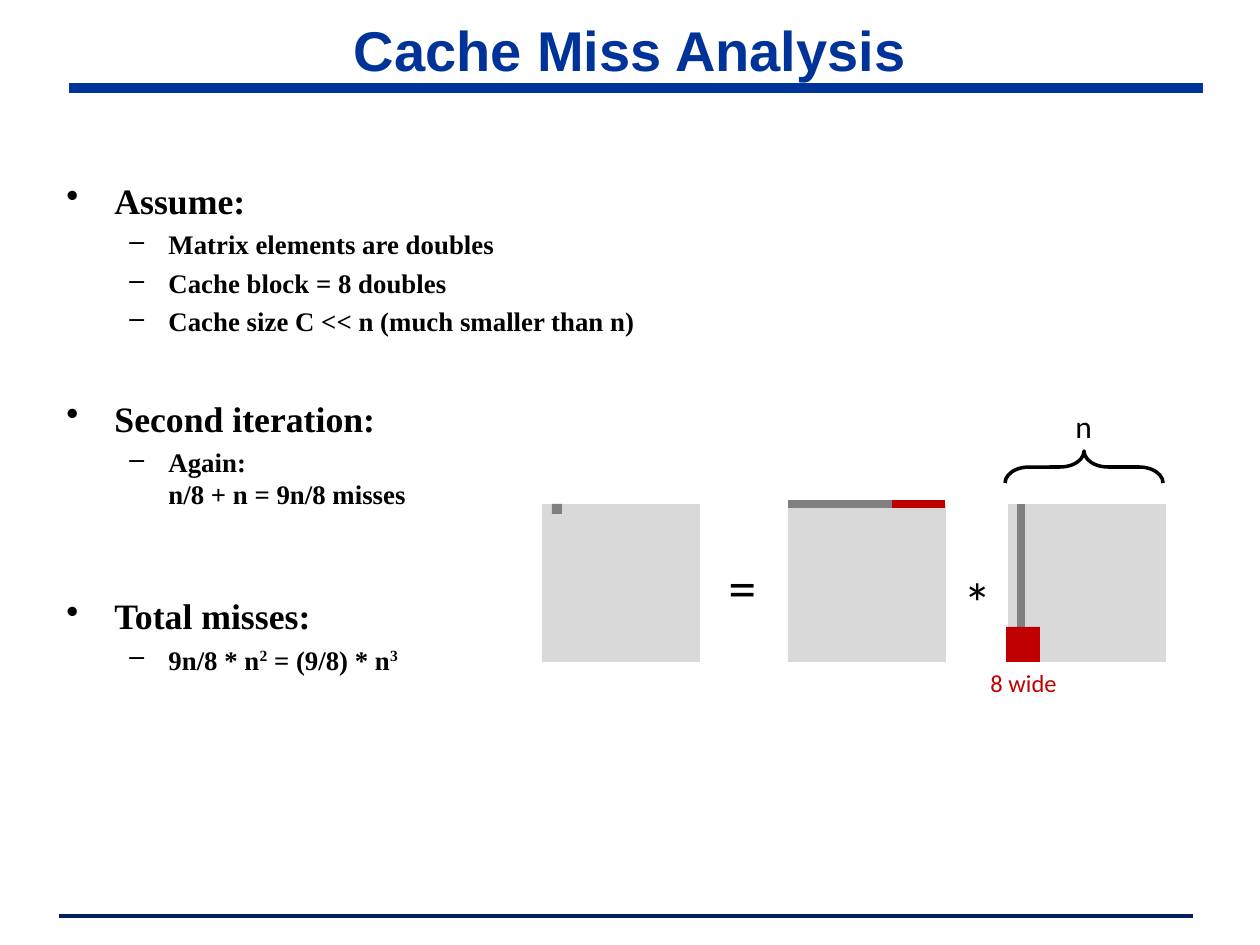
from copy import deepcopy

from pptx import Presentation
from pptx.dml.color import RGBColor
from pptx.enum.shapes import MSO_CONNECTOR as Conn, MSO_SHAPE as Geo
from pptx.enum.text import MSO_ANCHOR as Anchor, MSO_AUTO_SIZE as Fit, PP_ALIGN as Align
from pptx.oxml.ns import qn
from pptx.util import Pt
from lxml.etree import SubElement

NAVY = RGBColor(0x00, 0x20, 0x60)
BLUE = RGBColor(0x00, 0x33, 0x99)
BLACK = RGBColor(0x00, 0x00, 0x00)
LIGHT = RGBColor(0xD9, 0xD9, 0xD9)
GRAY = RGBColor(0x80, 0x80, 0x80)
RED = RGBColor(0xC0, 0x00, 0x00)

SCALE = 914400 / 126
SIDE = 158
TOP = 504
LEVELS = (
    {"char": "•", "left": 48, "hang": 48, "size": 20.4, "gap": 4.8},
    {"char": "–", "left": 102, "hang": 39, "size": 15.3, "gap": 3.6},
)
POINTS = (
    (0, 0, ("Assume:",)),
    (1, None, ("Matrix elements are doubles",)),
    (1, None, ("Cache block = 8 doubles",)),
    (1, None, ("Cache size C << n (much smaller than n)",)),
    (0, 34, ("Second iteration:",)),
    (1, None, ("Again:\vn/8 + n = 9n/8 misses",)),
    (0, 48, ("Total misses:",)),
    (1, None, ("9n/8 * n", "2", " = (9/8) * n", "3")),
)


def px(num):
    """Turn pixels into EMU."""
    return round(num * SCALE)


class Deck:
    """Holds the style and the current slide."""

    def __init__(self):
        """Open a deck with one title-only slide."""
        self.prs = Presentation()
        self.prs.slide_width, self.prs.slide_height = px(1260), px(945)
        self.slide = self.prs.slides.add_slide(self.prs.slide_layouts[5])
        self.shapes = self.slide.shapes

    def style(self, run, size, color, **more):
        """Format the font of a run."""
        look = {"name": "Calibri", "size": Pt(size), "bold": False} | more
        for key, val in look.items():
            setattr(run.font, key, val)
        run.font.color.rgb = color

    def title(self, text, *box):
        """Place and format the title."""
        item = self.shapes.title
        for key, val in zip(("left", "top", "width", "height"), box):
            setattr(item, key, px(val))
        frame = item.text_frame
        frame.text = text
        frame.vertical_anchor = Anchor.MIDDLE
        para = frame.paragraphs[0]
        para.alignment = Align.CENTER
        self.style(para.runs[0], 32, BLUE, name="Arial", bold=True)

    def line(self, x1, y1, x2, y2, color, width):
        """Draw a straight line."""
        item = self.shapes.add_connector(Conn.STRAIGHT, *map(px, (x1, y1, x2, y2)))
        item.line.color.rgb = color
        item.line.width = Pt(width)
        SubElement(item._element.spPr, qn("a:effectLst"))

    def rect(self, left, top, width, height, color):
        """Draw a filled rectangle."""
        item = self.shapes.add_shape(Geo.RECTANGLE, *map(px, (left, top, width, height)))
        item.shadow.inherit = False
        item.fill.solid()
        item.fill.fore_color.rgb = color
        item.line.fill.background()

    def brace(self, left, top, width, height):
        """Draw a brace that points up."""
        item = self.shapes.add_shape(Geo.LEFT_BRACE, *map(px, (left, top, width, height)))
        item.shadow.inherit = False
        item.rotation = 90
        item.adjustments[0] = 0.75
        item.fill.background()
        item.line.color.rgb = BLACK
        item.line.width = Pt(2)

    def label(self, text, left, top, width, height, size, color=BLACK):
        """Add a short label that does not wrap."""
        item = self.shapes.add_textbox(*map(px, (left, top, width, height)))
        frame = item.text_frame
        frame.text = text
        frame.word_wrap = False
        frame.auto_size = Fit.SHAPE_TO_FIT_TEXT
        self.style(frame.paragraphs[0].runs[0], size, color)

    def bullets(self, points, left, top, width, height):
        """Add the bulleted text, with every second part raised."""
        frame = self.shapes.add_textbox(*map(px, (left, top, width, height))).text_frame
        frame.word_wrap = True
        frame.margin_top = px(13)
        for num, (level, gap, parts) in enumerate(points):
            para = frame.add_paragraph() if num else frame.paragraphs[0]
            look = LEVELS[level]
            props = para._p.get_or_add_pPr()
            props.set("marL", str(px(look["left"])))
            props.set("indent", str(-px(look["hang"])))
            SubElement(props, qn("a:buChar")).set("char", look["char"])
            para.level = level
            para.space_before = Pt(look["gap"] if gap is None else gap)
            para.text = parts[0]
            for part in parts[1:]:
                para.add_run().text = part
            for run in para.runs:
                self.style(run, look["size"], BLACK, name="Times New Roman", bold=True)
            for stop in para._p.findall(qn("a:br")):
                stop.append(deepcopy(para.runs[0]._r.rPr))
            for run in para.runs[1::2] if len(parts) > 1 else ():
                run._r.rPr.set("baseline", "30000")


def main():
    """Build the slide."""
    deck = Deck()
    deck.line(59, 916, 1193, 916, NAVY, 2.25)
    deck.line(69, 88, 1203, 88, BLUE, 6)
    deck.title("Cache Miss Analysis", 63, 20, 1134, 59)
    deck.bullets(POINTS, 54, 166, 1089, 421)
    deck.brace(1068, 388, 32, SIDE)
    deck.label("n", 1063, 401, 43, 50, 18)
    for left in (542, 788, 1008):
        deck.rect(left, TOP, SIDE, SIDE, LIGHT)
    deck.line(788, TOP, 945, TOP, GRAY, 4.5)
    deck.line(1021, TOP, 1021, TOP + SIDE, GRAY, 4.5)
    deck.label("*", 951, 561, 54, 81, 32)
    deck.label("=", 716, 546, 54, 81, 32)
    deck.rect(552, TOP, 10, 10, GRAY)
    deck.line(892, TOP, 945, TOP, RED, 4.5)
    deck.rect(1006, 627, 34, 35, RED)
    deck.label("8 wide", 978, 662, 93, 43, 14, RED)
    deck.prs.save("out.pptx")


if __name__ == "__main__":
    main()
